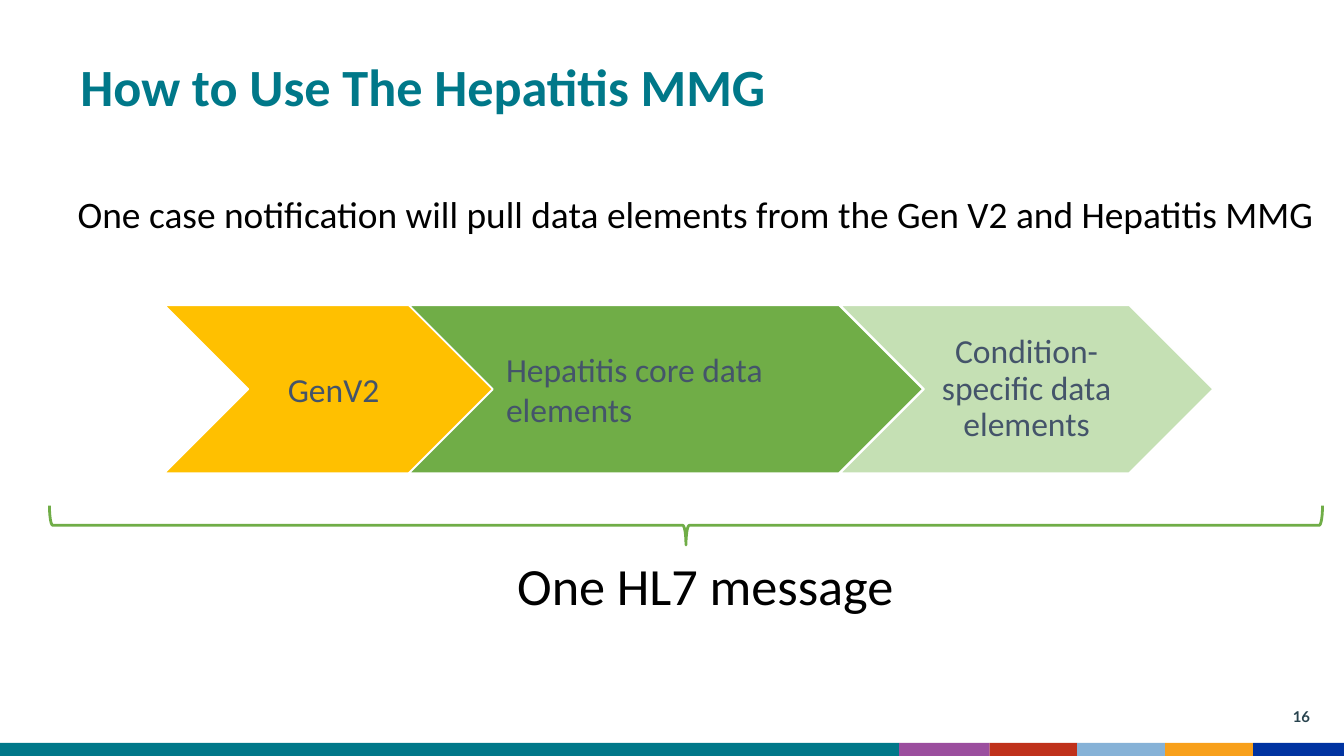
import itertools

import pptx
import pptx.dml.color
import pptx.enum.shapes
import pptx.enum.text
import pptx.oxml.ns
import pptx.util

Pt = pptx.util.Pt
SHAPE = pptx.enum.shapes.MSO_SHAPE
ALIGN = pptx.enum.text.PP_ALIGN
ANCHOR = pptx.enum.text.MSO_ANCHOR


def color(value):
    return pptx.dml.color.RGBColor.from_string(value)


def write(box, text, size, ink, align=ALIGN.LEFT, anchor=ANCHOR.TOP,
          spacing=None, bold=False, font="Calibri", wrap=True):
    frame = box.text_frame
    frame.word_wrap = wrap
    frame.vertical_anchor = anchor
    frame.text = text
    para = frame.paragraphs[0]
    para.alignment = align
    para.line_spacing = spacing
    span = para.runs[0]
    span.font.name = font
    span.font.size = Pt(size)
    span.font.bold = bold
    span.font.color.rgb = color(ink)


deck = pptx.Presentation()
deck.slide_width = Pt(720)
deck.slide_height = Pt(405)
page = deck.slides.add_slide(deck.slide_layouts[6])

stripe_edges = [0, 481.7, 530.2, 577.1, 624.2, 671.3, 720]
stripe_fills = ["007889", "9B4E9E", "BF311B", "86B2D7", "F8A01B", "0033A1"]
for (left, right), fill in zip(itertools.pairwise(stripe_edges), stripe_fills):
    stripe = page.shapes.add_shape(SHAPE.RECTANGLE, Pt(left), Pt(398), Pt(right - left), Pt(7))
    stripe.shadow.inherit = False
    stripe.fill.solid()
    stripe.fill.fore_color.rgb = color(fill)
    stripe.line.fill.background()

title = page.shapes.add_textbox(Pt(36), Pt(29.5), Pt(648), Pt(52))
write(title, "How to Use The Hepatitis MMG", 28, "007889", spacing=0.9, bold=True)

summary = page.shapes.add_textbox(Pt(34.5), Pt(101.5), Pt(685), Pt(32))
write(summary, "One case notification will pull data elements from the Gen V2 and Hepatitis MMG",
      20, "000000", spacing=0.9)

chevrons = [
    (88, 181.5, "FFC000", "GenV2", ALIGN.CENTER, None),
    (219, 275.5, "70AD47", "Hepatitis core data elements", ALIGN.LEFT, None),
    (450, 200, "C5E0B4", "Condition-specific data elements", ALIGN.CENTER, 0.9),
]
for left, width, fill, text, align, spacing in chevrons:
    chevron = page.shapes.add_shape(SHAPE.CHEVRON, Pt(left), Pt(163.5), Pt(width), Pt(90))
    chevron.shadow.inherit = False
    chevron.fill.solid()
    chevron.fill.fore_color.rgb = color(fill)
    chevron.line.color.rgb = color("FFFFFF")
    chevron.line.width = Pt(1)
    write(chevron, text, 18, "44546A", align, ANCHOR.MIDDLE, spacing)

brace = page.shapes.add_shape(SHAPE.LEFT_BRACE, Pt(357), Pt(-59.6), Pt(21), Pt(682))
brace.rotation = 270
brace.shadow.inherit = False
brace.fill.background()
brace.line.color.rgb = color("70AD47")
brace.line.width = Pt(1.5)

message = page.shapes.add_textbox(Pt(270), Pt(293), Pt(218), Pt(41))
write(message, "One HL7 message", 28, "000000", wrap=False)

number = page.shapes.add_textbox(Pt(672.5), Pt(373), Pt(36.5), Pt(21.5))
write(number, "16", 8, "28434E", ALIGN.RIGHT, ANCHOR.MIDDLE, bold=True, font="Lato")

deck.save("out.pptx")
